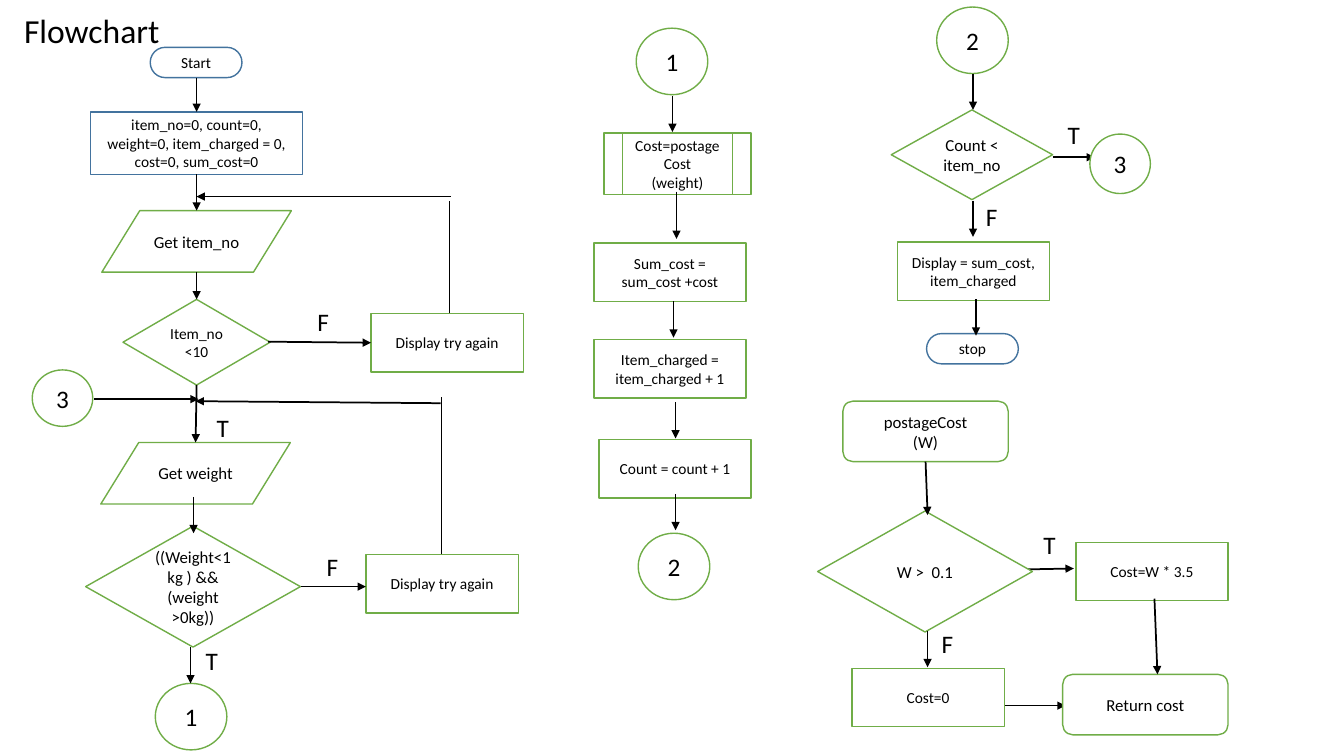
from lxml import etree
from pptx import Presentation
from pptx.dml.color import RGBColor
from pptx.enum.shapes import MSO_CONNECTOR, MSO_SHAPE
from pptx.enum.text import MSO_ANCHOR, MSO_AUTO_SIZE, PP_ALIGN
from pptx.oxml.ns import qn
from pptx.util import Inches, Pt

STRAIGHT = MSO_CONNECTOR.STRAIGHT
TERMINATOR = MSO_SHAPE.FLOWCHART_TERMINATOR
PROCESS = MSO_SHAPE.FLOWCHART_PROCESS
DATA = MSO_SHAPE.FLOWCHART_DATA
DECISION = MSO_SHAPE.FLOWCHART_DECISION
SUBROUTINE = MSO_SHAPE.FLOWCHART_PREDEFINED_PROCESS
ROUNDED = MSO_SHAPE.FLOWCHART_ALTERNATE_PROCESS
CIRCLE = MSO_SHAPE.OVAL
MIDDLE, TOP = MSO_ANCHOR.MIDDLE, MSO_ANCHOR.TOP
CENTER, LEFT = PP_ALIGN.CENTER, PP_ALIGN.LEFT
FIT_TEXT, FIXED = MSO_AUTO_SIZE.SHAPE_TO_FIT_TEXT, MSO_AUTO_SIZE.NONE

BLACK, WHITE, GREEN, BLUE = "000000", "FFFFFF", "70AD47", "43739E"


def color(value):
    return RGBColor.from_string(value)


def apply(target, formats):
    for name, value in formats.items():
        setattr(target, name, value)


class Flowchart:
    """Holds the text style and the slide being drawn."""

    font = "Calibri"

    def __init__(self, slide):
        self.shapes = slide.shapes

    def fill_text(self, box, text, size, frame_format, para_format):
        frame = box.text_frame
        apply(frame, frame_format)
        for index, line in enumerate(text.split("\n")):
            para = frame.add_paragraph() if index else frame.paragraphs[0]
            apply(para, para_format)
            span = para.add_run()
            span.text = line
            apply(span.font, {"name": self.font, "size": Pt(size)})
            span.font.color.rgb = color(BLACK)

    def title(self, text, *place):
        box = self.shapes.add_textbox(*map(Inches, place))
        self.fill_text(box, text, 24, {"word_wrap": True, "vertical_anchor": MIDDLE},
                       {"alignment": LEFT, "line_spacing": 0.9})

    def label(self, text, left, top):
        box = self.shapes.add_textbox(Inches(left), Inches(top), Inches(0.32), Inches(0.4))
        self.fill_text(box, text, 18,
                       {"word_wrap": False, "auto_size": FIT_TEXT, "vertical_anchor": TOP},
                       {"alignment": LEFT})

    def node(self, kind, text, size, left, top, width, height, outline=GREEN):
        box = self.shapes.add_shape(kind, Inches(left), Inches(top),
                                    Inches(width), Inches(height))
        box.shadow.inherit = False
        if outline == GREEN:
            box.fill.solid()
            box.fill.fore_color.rgb = color(WHITE)
        else:
            box.fill.background()
        box.line.color.rgb = color(outline)
        box.line.width = Pt(1)
        self.fill_text(box, text, size,
                       {"word_wrap": True, "auto_size": FIXED, "vertical_anchor": MIDDLE},
                       {"alignment": CENTER})

    def wire(self, *ends, width=0.5):
        line = self.shapes.add_connector(STRAIGHT, *map(Inches, ends))
        line.line.color.rgb = color(BLACK)
        line.line.width = Pt(width)
        etree.SubElement(line._element.spPr, qn("a:effectLst"))
        return line

    def arrow(self, *ends):
        line = self.wire(*ends, width=1.25)
        stroke = line._element.spPr.find(qn("a:ln"))
        etree.SubElement(stroke, qn("a:tailEnd"), type="triangle")


# Arrows whose ends are tucked under a node
UNDER_ARROWS = [
    (9.95, 7, 10.57, 7),
    (10.1, 5.65, 10.65, 5.64),
    (10.44, 1.56, 10.86, 1.56),
]

# Nodes of one common size: text, left, top
STEPS = [
    ("Display try again", 3.68, 3.11),
    ("Display try again", 3.63, 5.5),
    ("Sum_cost = sum_cost +cost", 5.89, 2.41),
    ("Item_charged = item_charged + 1", 5.89, 3.37),
    ("Count = count + 1", 5.94, 4.36),
    ("Display = sum_cost,\nitem_charged", 8.9, 2.4),
    ("Cost=0", 8.45, 6.63),
    ("Cost=W * 3.5", 10.67, 5.38),
]
INPUTS = [("Get item_no", 1.01, 2.09), ("Get weight", 1, 4.39)]
ENDPOINTS = [("Start", 1.49, 0.47), ("stop", 9.19, 3.31)]
ROUTINE_ENDS = [("postageCost\n(W)", 8.36, 3.98), ("Return cost", 10.54, 6.69)]
LINKS = [("1", 1.54, 6.78), ("1", 6.31, 0.28), ("2", 6.33, 5.29), ("2", 9.29, 0.07)]

# Kind, text size, width, height, outline, nodes
NODE_GROUPS = [
    (PROCESS, 11, 1.51, 0.58, GREEN, STEPS),
    (DATA, 12, 1.88, 0.61, GREEN, INPUTS),
    (TERMINATOR, 11, 0.91, 0.3, BLUE, ENDPOINTS),
    (ROUNDED, 12, 1.64, 0.6, GREEN, ROUTINE_ENDS),
    (CIRCLE, 18, 0.71, 0.66, GREEN, LINKS),
]

# Nodes with a size of their own
SINGLE_NODES = [
    (PROCESS, "item_no=0, count=0, weight=0, item_charged = 0, cost=0, sum_cost=0", 11,
     0.9, 1.11, 2.1, 0.62, BLUE),
    (DECISION, "Item_no<10", 11, 1.22, 2.97, 1.46, 0.85),
    (DECISION, "((Weight<1 kg ) && (weight >0kg))", 12, 0.85, 5.22, 2.13, 1.2),
    (DECISION, "Count < item_no", 12, 8.84, 1.09, 1.6, 0.89),
    (DECISION, "W >  0.1", 12, 8.11, 5.07, 2.13, 1.2),
    (SUBROUTINE, "Cost=postageCost\n(weight)", 11, 5.99, 1.32, 1.46, 0.61),
    (CIRCLE, "3", 18, 0.32, 3.67, 0.6, 0.56),
    (CIRCLE, "3", 18, 10.81, 1.33, 0.6, 0.59),
]

# Vertical arrows: x, top, bottom
DOWN_ARROWS = [
    (1.95, 0.77, 1.11), (1.95, 1.73, 2.09), (1.95, 2.7, 2.97),
    (1.92, 4.93, 5.29), (1.89, 6.42, 6.78),
    (6.67, 0.95, 1.31), (6.71, 1.9, 2.37), (6.68, 2.99, 3.35),
    (6.7, 3.99, 4.35), (6.7, 4.9, 5.26),
    (9.65, 0.73, 1.09), (9.65, 1.99, 2.35), (9.68, 2.97, 3.33),
    (9.2, 6.26, 6.62),
]
OTHER_ARROWS = [
    (1.95, 3.82, 1.94, 4.39), (2.66, 3.39, 3.68, 3.4), (2.99, 5.82, 3.63, 5.82),
    (4.47, 1.95, 1.95, 1.95), (4.37, 4, 1.94, 3.98), (0.93, 3.96, 1.97, 3.96),
    (9.18, 4.58, 9.2, 5.11), (11.45, 5.94, 11.48, 6.69),
]
RETURN_WIRES = [(4.46, 3.11, 4.46, 1.99), (4.38, 5.5, 4.38, 3.94)]

BRANCH_LABELS = [
    ("T", 2.05, 4.04), ("T", 1.94, 6.35), ("T", 10.49, 1.13), ("T", 10.25, 5.2),
    ("F", 3.05, 2.99), ("F", 3.14, 5.42), ("F", 9.68, 1.95), ("F", 9.24, 6.18),
]


def main():
    deck = Presentation()
    deck.slide_width, deck.slide_height = Inches(13.33), Inches(7.5)
    chart = Flowchart(deck.slides.add_slide(deck.slide_layouts[6]))

    chart.title("Flowchart", 0.14, -0.09, 11.5, 0.83)
    for ends in UNDER_ARROWS:
        chart.arrow(*ends)

    # Nodes
    for kind, size, width, height, outline, nodes in NODE_GROUPS:
        for text, left, top in nodes:
            chart.node(kind, text, size, left, top, width, height, outline)
    for node in SINGLE_NODES:
        chart.node(*node)

    # Flow lines
    for x, top, bottom in DOWN_ARROWS:
        chart.arrow(x, top, x, bottom)
    for ends in OTHER_ARROWS:
        chart.arrow(*ends)
    for ends in RETURN_WIRES:
        chart.wire(*ends)

    # Branch labels
    for label in BRANCH_LABELS:
        chart.label(*label)

    deck.save("out.pptx")


if __name__ == "__main__":
    main()
